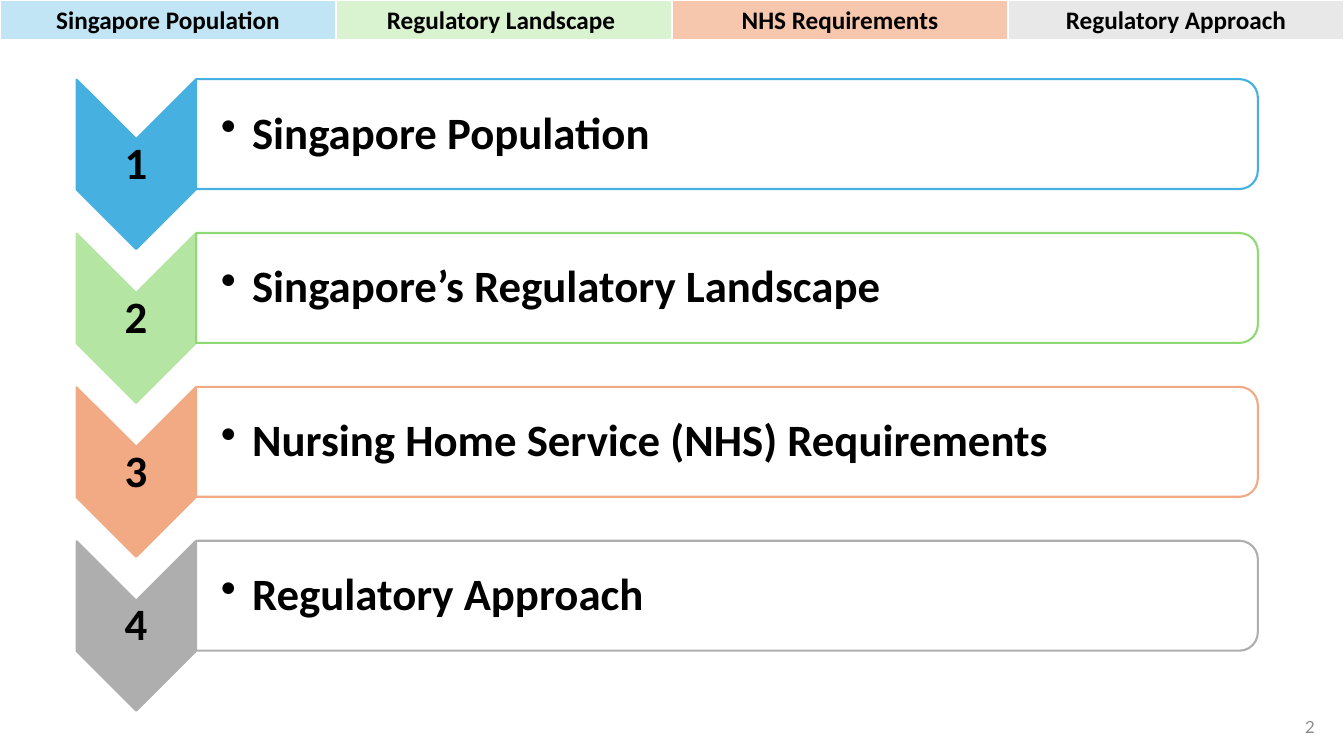
import pptx
import pptx.util
import pptx.dml.color
import pptx.enum.shapes
import pptx.enum.text
import pptx.oxml
import pptx.oxml.ns
from pptx.util import Inches

ALIGN = pptx.enum.text.PP_ALIGN
SHAPE = pptx.enum.shapes.MSO_SHAPE
COLOR = pptx.dml.color.RGBColor.from_string
NAMESPACE = pptx.oxml.ns.nsdecls("a")

THEME = {
    "white": COLOR("FFFFFF"),
    "heading": {"name": "Calibri", "size": pptx.util.Pt(18), "bold": True, "color": COLOR("000000")},
    "topic": {"name": "Calibri", "size": pptx.util.Pt(32), "bold": True, "color": COLOR("000000")},
    "page": {"name": "Lato", "size": pptx.util.Pt(12), "bold": False, "color": COLOR("8C8C8C")},
    "line": pptx.util.Pt(1.5),
    "borders": {"lnL": 1, "lnR": 1, "lnT": 1, "lnB": 3},
}

# Heading, heading fill, topic, chevron colour, outline colour
SECTIONS = [
    ("Singapore Population", "C1E5F5", "Singapore Population", "46B1E1", "46B1E1"),
    ("Regulatory Landscape ", "D9F2D0", "Singapore’s Regulatory Landscape", "B4E5A2", "8ED973"),
    ("NHS Requirements", "F6C6AD", "Nursing Home Service (NHS) Requirements", "F2AA84", "F2AA84"),
    ("Regulatory Approach", "E8E8E8", "Regulatory Approach", "AEAEAE", "AEAEAE"),
]


def write(frame, text, style, align, margins=(0.1, 0.05, 0.1, 0.05), bullet=False):
    frame.word_wrap = True
    frame.vertical_anchor = pptx.enum.text.MSO_ANCHOR.MIDDLE
    for side, margin in zip(("left", "top", "right", "bottom"), margins):
        setattr(frame, f"margin_{side}", Inches(margin))
    para = frame.paragraphs[0]
    para.alignment = align
    if bullet:
        properties = para._p.get_or_add_pPr()
        properties.set("marL", str(Inches(0.31)))
        properties.set("indent", str(Inches(-0.31)))
        properties.append(pptx.oxml.parse_xml(f'<a:buChar {NAMESPACE} char="•"/>'))
    if style == "topic":
        para.line_spacing = 0.9
    span = para.add_run()
    span.text = text
    for key, value in THEME[style].items():
        if key == "color":
            span.font.color.rgb = value
        else:
            setattr(span.font, key, value)


def add_rotated(kind, middle_x, middle_y, width, height, fill, line):
    shape = slide.shapes.add_shape(
        kind, Inches(middle_x - width / 2), Inches(middle_y - height / 2), Inches(width), Inches(height))
    shape.rotation = 90
    shape.shadow.inherit = False
    shape.fill.solid()
    shape.fill.fore_color.rgb = fill
    shape.line.color.rgb = line
    shape.line.width = THEME["line"]
    return shape


deck = pptx.Presentation()
deck.slide_width, deck.slide_height = Inches(13.33), Inches(7.5)
slide = deck.slides.add_slide(deck.slide_layouts[6])

# Section strip across the top
strip = slide.shapes.add_table(1, len(SECTIONS), 0, 0, deck.slide_width, Inches(0.41)).table
for cell, (heading, tint, *_) in zip(strip.iter_cells(), SECTIONS):
    write(cell.text_frame, heading, "heading", ALIGN.CENTER)
    cell.vertical_anchor = pptx.enum.text.MSO_ANCHOR.TOP
    for edge, points in THEME["borders"].items():
        cell._tc.get_or_add_tcPr().append(pptx.oxml.parse_xml(
            f'<a:{edge} {NAMESPACE} w="{pptx.util.Pt(points)}"><a:solidFill>'
            f'<a:srgbClr val="{THEME["white"]}"/></a:solidFill></a:{edge}>'))
    cell.fill.solid()
    cell.fill.fore_color.rgb = COLOR(tint)

# Numbered agenda rows
PITCH = 4.58 / 3
for index, (_, _, topic, chevron_color, outline) in enumerate(SECTIONS):
    chevron_y = 1.63 + index * PITCH
    panel_y = 1.33 + index * PITCH

    add_rotated(SHAPE.CHEVRON, 1.35, chevron_y, 1.68, 1.18, COLOR(chevron_color), COLOR(chevron_color))
    number = slide.shapes.add_textbox(Inches(0.76), Inches(chevron_y - 0.25), Inches(1.18), Inches(0.51))
    write(number.text_frame, str(index + 1), "topic", ALIGN.CENTER, (0.02,) * 4)

    panel = add_rotated(SHAPE.ROUND_2_SAME_RECTANGLE, 7.21, panel_y, 1.09, 10.53, THEME["white"], COLOR(outline))
    panel_color = panel.fill._xPr.find(pptx.oxml.ns.qn("a:solidFill"))[0]
    panel_color.append(pptx.oxml.parse_xml(f'<a:alpha {NAMESPACE} val="90000"/>'))
    label = slide.shapes.add_textbox(Inches(1.94), Inches(panel_y - 0.49), Inches(10.48), Inches(0.99))
    write(label.text_frame, topic, "topic", ALIGN.LEFT, (0.25, 0.02, 0.02, 0.02), bullet=True)

# Page number
page = slide.shapes.add_textbox(Inches(12.57), Inches(7.04), Inches(0.57), Inches(0.34))
write(page.text_frame, "2", "page", ALIGN.RIGHT)

deck.save("out.pptx")
